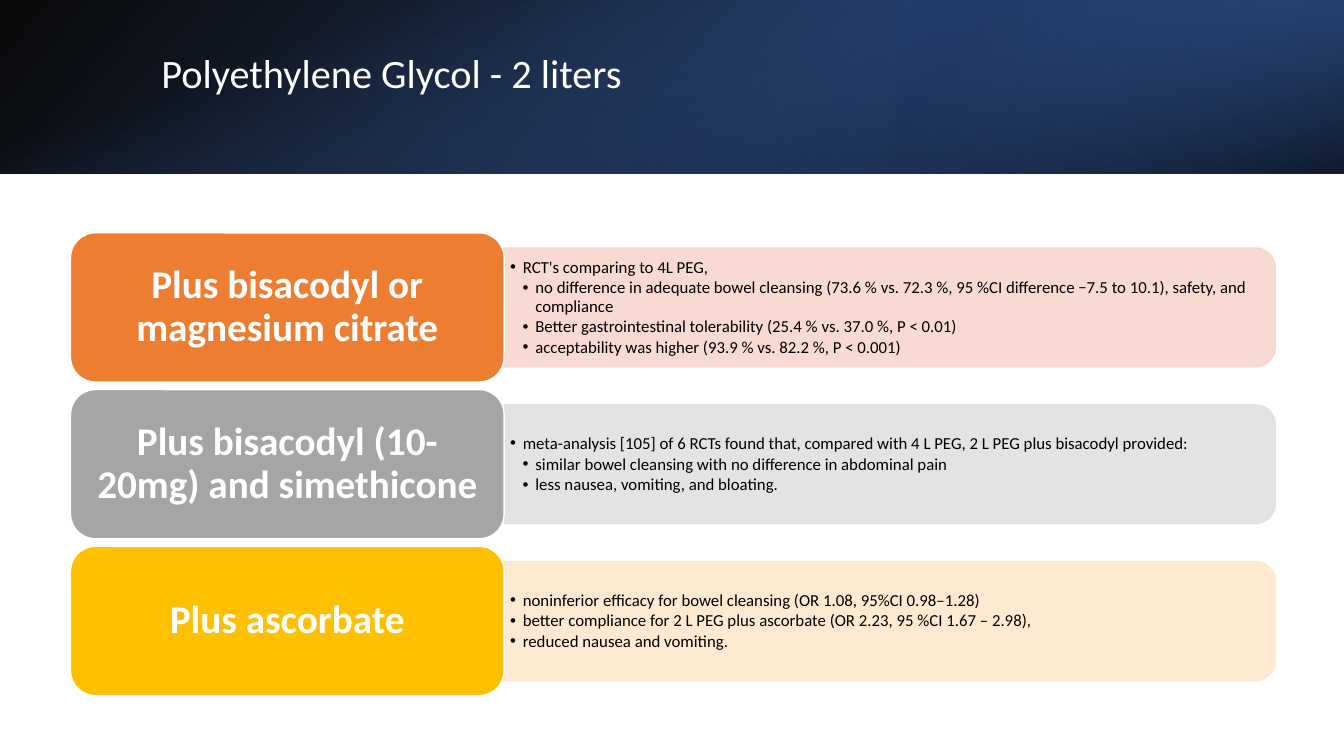
import pptx
import pptx.util
import pptx.dml.color
import pptx.enum.shapes
import pptx.enum.text
import pptx.oxml
import pptx.oxml.ns
from lxml import etree

Inches, Pt = pptx.util.Inches, pptx.util.Pt
SHAPE = pptx.enum.shapes.MSO_SHAPE
ALIGN = pptx.enum.text.PP_ALIGN
MIDDLE = pptx.enum.text.MSO_ANCHOR.MIDDLE
qn = pptx.oxml.ns.qn

COLORS = {
    "black": "000000", "white": "FFFFFF",
    "navy": "203864", "blue": "2F5597", "bright": "4472C4",
    "orange": "ED7D31", "orange_tint": "F8D7CE",
    "gray": "A5A5A5", "gray_tint": "E1E1E1",
    "gold": "FFC000", "gold_tint": "FFE8CC",
}
FONT = "Calibri"
SLIDE_W, SLIDE_H, HEADER_H = 13.33, 7.5, 1.72
ROW_LEFT, ROW_TOP, ROW_W, ROW_H, ROW_PITCH = 0.7, 2.31, 11.95, 1.48, 1.555

# label, label colour, panel colour, [(bullet level, text)]
REGIMENS = [
    ("Plus bisacodyl or magnesium citrate", "orange", "orange_tint", [
        (0, "RCT's comparing to 4L PEG,"),
        (1, "no difference in adequate bowel cleansing (73.6 % vs. 72.3 %, "
            "95 %CI difference −7.5 to 10.1), safety, and compliance"),
        (1, "Better gastrointestinal tolerability (25.4 % vs. 37.0 %, P < 0.01)"),
        (1, "acceptability was higher (93.9 % vs. 82.2 %, P < 0.001)"),
    ]),
    ("Plus bisacodyl (10-20mg) and simethicone", "gray", "gray_tint", [
        (0, "meta-analysis [105] of 6 RCTs found that, compared with 4 L PEG, "
            "2 L PEG plus bisacodyl provided:"),
        (1, "similar bowel cleansing with no difference in abdominal pain"),
        (1, "less nausea, vomiting, and bloating."),
    ]),
    ("Plus ascorbate", "gold", "gold_tint", [
        (0, "noninferior efficacy for bowel cleansing (OR 1.08, 95%CI 0.98–1.28)"),
        (0, "better compliance for 2 L PEG plus ascorbate (OR 2.23, 95 %CI 1.67 – 2.98),"),
        (0, "reduced nausea and vomiting."),
    ]),
]


def rgb(name):
    return pptx.dml.color.RGBColor.from_string(COLORS[name])


def add_shape(slide, kind, x, y, w, h, rotation=0):
    """Add a preset shape whose box is given as it appears after rotation."""
    if rotation == 90:
        x, y, w, h = x + (w - h) / 2, y + (h - w) / 2, h, w
    sp = slide.shapes.add_shape(kind, Inches(x), Inches(y), Inches(w), Inches(h))
    sp.rotation = rotation
    sp.shadow.inherit = False
    return sp


def fill_solid(sp, fill, line):
    sp.fill.solid()
    sp.fill.fore_color.rgb = rgb(fill)
    sp.line.color.rgb = rgb(line)
    sp.line.width = Pt(1)


def set_alpha(color, percent):
    etree.SubElement(color, qn("a:alpha"), val=str(percent * 1000))


def fill_gradient(sp, stops, angle):
    """Fill with (position, colour, opacity) stops at a clockwise angle."""
    sp.line.fill.background()
    sp.fill.gradient()
    grad = sp._element.spPr.find(qn("a:gradFill"))
    grad.set("rotWithShape", "1")
    for child in list(grad):
        grad.remove(child)
    stop_list = etree.SubElement(grad, qn("a:gsLst"))
    for position, color, opacity in stops:
        stop = etree.SubElement(stop_list, qn("a:gs"), pos=str(position * 1000))
        set_alpha(etree.SubElement(stop, qn("a:srgbClr"), val=COLORS[color]), opacity)
    etree.SubElement(grad, qn("a:lin"), ang=str(angle * 60000), scaled="0")


def add_run(p, text, size, color, bold=False):
    r = p.add_run()
    r.text = text
    r.font.name, r.font.size, r.font.bold = FONT, Pt(size), bold
    r.font.color.rgb = rgb(color)


def format_frame(tf, side, top):
    tf.word_wrap = True
    tf.vertical_anchor = MIDDLE
    tf.margin_left = tf.margin_right = Inches(side)
    tf.margin_top = tf.margin_bottom = Inches(top)


def add_header(slide, x, y, w, h):
    layers = [
        (x, w, 0, True, [(0, "black", 96), (100, "blue", 100)], 140),
        (x + w * 2 / 3, w / 3, 180, True, [(19, "navy", 68), (100, "bright", 79)], 320),
        (x, w, 90, False, [(23, "bright", 0), (99, "black", 74)], 340),
    ]
    for left, width, rotation, flipped, stops, angle in layers:
        sp = add_shape(slide, SHAPE.RECTANGLE, left, y, width, h, rotation)
        if flipped:
            sp._element.spPr.find(qn("a:xfrm")).set("flipH", "1")
        fill_gradient(sp, stops, angle)

    title = slide.shapes.title
    title.left, title.top = Inches(x + 1.5), Inches(y + 0.27)
    title.width, title.height = Inches(10.98), Inches(0.96)
    tree = slide.shapes._spTree
    tree.remove(title._element)
    tree.append(title._element)
    format_frame(title.text_frame, 0.1, 0.05)
    p = title.text_frame.paragraphs[0]
    p.alignment, p.line_spacing = ALIGN.LEFT, 0.9
    add_run(p, "Polyethylene Glycol - 2 liters", 28.8, "white")


def add_bullets(slide, bullets, x, y, w, h):
    box = slide.shapes.add_textbox(Inches(x), Inches(y), Inches(w), Inches(h))
    tf = box.text_frame
    format_frame(tf, 0.05, 0.03)
    for i, (level, text) in enumerate(bullets):
        p = tf.add_paragraph() if i else tf.paragraphs[0]
        p.level = level
        p.line_spacing, p.space_after = 0.9, Pt(1.8)
        pPr = p._p.get_or_add_pPr()
        pPr.set("marL", str(Inches(0.125 * (level + 1))))
        pPr.set("indent", str(-Inches(0.125)))
        etree.SubElement(pPr, qn("a:buFont"), typeface="Arial")
        etree.SubElement(pPr, qn("a:buChar"), char="•")
        add_run(p, text, 12, "black")


def add_regimen(slide, regimen, x, y, w, h):
    label, color, tint, bullets = regimen
    label_w, panel_inset = 4.3, 0.15
    panel_h = h - 2 * panel_inset
    panel = add_shape(slide, SHAPE.ROUND_2_SAME_RECTANGLE, x + label_w,
                      y + panel_inset, w - label_w, panel_h, 90)
    fill_solid(panel, tint, tint)
    for clr in panel._element.spPr.iter(qn("a:srgbClr")):
        set_alpha(clr, 90)
    add_bullets(slide, bullets, x + label_w + 0.01, y + 0.21, w - label_w - 0.06, 1.07)

    sp = add_shape(slide, SHAPE.ROUNDED_RECTANGLE, x, y, label_w, h)
    fill_solid(sp, color, "white")
    format_frame(sp.text_frame, 0.12, 0.06)
    p = sp.text_frame.paragraphs[0]
    p.alignment, p.line_spacing = ALIGN.CENTER, 0.9
    add_run(p, label, 28, "white", bold=True)


def main():
    prs = pptx.Presentation()
    prs.slide_width, prs.slide_height = Inches(SLIDE_W), Inches(SLIDE_H)
    slide = prs.slides.add_slide(prs.slide_layouts[5])
    add_header(slide, 0, 0, SLIDE_W, HEADER_H)
    for i, regimen in enumerate(REGIMENS):
        add_regimen(slide, regimen, ROW_LEFT, ROW_TOP + i * ROW_PITCH, ROW_W, ROW_H)
    prs.save("out.pptx")


if __name__ == "__main__":
    main()
